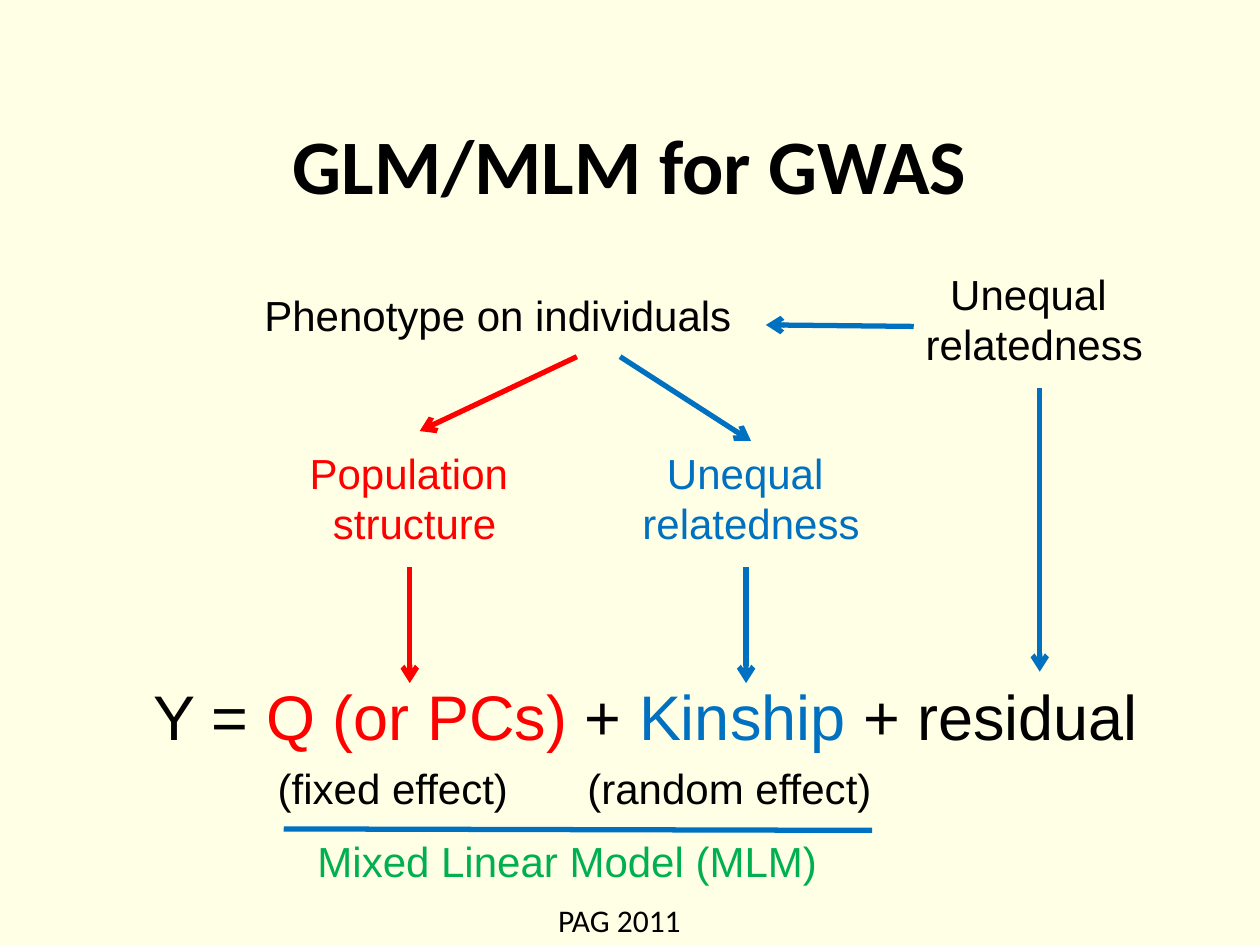
import dataclasses

import pptx
import pptx.dml.color
import pptx.enum.shapes
import pptx.enum.text
import pptx.oxml
import pptx.oxml.ns
import pptx.util

Cm = pptx.util.Cm
Pt = pptx.util.Pt
ALIGN = pptx.enum.text.PP_ALIGN


@dataclasses.dataclass(frozen=True)
class Theme:
    background: str = "FFFFE6"
    ink: str = "000000"
    structure: str = "FF0000"
    kinship: str = "0070C0"
    model: str = "00B050"
    heading_font: str = "Calibri"
    body_font: str = "Arial"
    title_size: int = 44
    equation_size: int = 36
    label_size: int = 24
    footer_size: int = 18
    line_width: int = 3


@dataclasses.dataclass(frozen=True)
class Box:
    left: float
    top: float
    width: float
    height: float

    def inner(self, left, top, width, height):
        return Box(self.left + left, self.top + top, width, height)

    def point(self, x, y):
        return Cm(self.left + x), Cm(self.top + y)

    def lengths(self):
        return [Cm(value) for value in dataclasses.astuple(self)]


THEME = Theme()


def color(value):
    return pptx.dml.color.RGBColor.from_string(value)


def add_run(paragraph, text, size, fill, font=THEME.body_font, bold=False):
    run = paragraph.add_run()
    run.text = text
    run.font.name = font
    run.font.size = Pt(size)
    run.font.bold = bold
    run.font.color.rgb = color(fill)


def add_text(slide, box, lines, size=THEME.label_size, font=THEME.body_font,
             align=ALIGN.CENTER, wrap=True):
    """Each line is a list of (text, colour) runs."""
    frame = slide.shapes.add_textbox(*box.lengths()).text_frame
    frame.word_wrap = wrap
    for index, runs in enumerate(lines):
        paragraph = frame.add_paragraph() if index else frame.paragraphs[0]
        paragraph.alignment = align
        for text, fill in runs:
            add_run(paragraph, text, size, fill, font)


def add_line(slide, start, end, fill, arrow=True):
    connector = slide.shapes.add_connector(
        pptx.enum.shapes.MSO_CONNECTOR.STRAIGHT, *start, *end)
    connector.line.color.rgb = color(fill)
    connector.line.width = Pt(THEME.line_width)
    namespace = pptx.oxml.ns.nsdecls("a")
    properties = connector._element.spPr
    if arrow:
        outline = properties.find(pptx.oxml.ns.qn("a:ln"))
        outline.append(pptx.oxml.parse_xml(
            f'<a:tailEnd {namespace} type="arrow"/>'))
    properties.append(pptx.oxml.parse_xml(f'<a:effectLst {namespace}/>'))


def fill_title(slide, box):
    title = slide.shapes.title
    title.left, title.top, title.width, title.height = box.lengths()
    title.text_frame.vertical_anchor = pptx.enum.text.MSO_ANCHOR.MIDDLE
    paragraph = title.text_frame.paragraphs[0]
    paragraph.alignment = ALIGN.CENTER
    add_run(paragraph, "GLM/MLM for GWAS", THEME.title_size, THEME.ink,
            THEME.heading_font, bold=True)


def add_causes(slide, box):
    # Phenotype and the sources of its variation
    add_text(slide, box.inner(0, 0.44, 10.16, 1.27),
             [[("Phenotype on individuals", THEME.ink)]], align=ALIGN.LEFT)
    for left, top, words, fill in (
        (0.64, 3.61, ("Population ", "structure"), THEME.structure),
        (7.42, 3.61, ("Unequal ", "relatedness"), THEME.kinship),
        (13.13, 0, ("Unequal ", "relatedness"), THEME.ink),
    ):
        add_text(slide, box.inner(left, top, 5.28, 2.31),
                 [[(word, fill)] for word in words])

    # Arrows between the causes, then down to the model terms
    for start, end, fill in (
        ((6.55, 1.91), (3.38, 3.41), THEME.structure),
        ((7.42, 1.91), (10.06, 3.61), THEME.kinship),
        ((13.34, 1.3), (10.36, 1.27), THEME.kinship),
        ((3.18, 6.15), (3.18, 8.49), THEME.structure),
        ((9.96, 6.15), (9.96, 8.49), THEME.kinship),
        ((15.88, 2.54), (15.88, 8.26), THEME.kinship),
    ):
        add_line(slide, box.point(*start), box.point(*end), fill)


def add_model(slide, box):
    # Equation
    add_text(slide, box.inner(0, 0, box.width, 1.8), [[
        ("Y = ", THEME.ink),
        ("Q (or PCs)", THEME.structure),
        (" + ", THEME.ink),
        ("Kinship", THEME.kinship),
        (" + residual", THEME.ink),
    ]], THEME.equation_size)

    # Effect types
    for left, width, text in ((2.74, 5.28, "(fixed effect)"),
                              (8.89, 6.55, "(random effect)")):
        add_text(slide, box.inner(left, 1.7, width, 1.27),
                 [[(text, THEME.ink)]])

    # Model name under its rule
    add_line(slide, box.point(15.04, 3.2), box.point(3.18, 3.17),
             THEME.kinship, arrow=False)
    add_text(slide, box.inner(3.61, 3.17, 11, 1.27),
             [[("Mixed Linear Model (MLM)", THEME.model)]], align=ALIGN.LEFT)


def add_footer(slide, box):
    add_text(slide, box, [[("PAG 2011", THEME.ink)]], THEME.footer_size,
             THEME.heading_font, ALIGN.LEFT, wrap=False)


def main():
    presentation = pptx.Presentation()
    presentation.slide_width = Cm(25.4)
    presentation.slide_height = Cm(19.05)
    slide = presentation.slides.add_slide(presentation.slide_layouts[5])
    slide.background.fill.solid()
    slide.background.fill.fore_color.rgb = color(THEME.background)

    add_footer(slide, Box(11, 18.03, 3.05, 1.02))
    fill_title(slide, Box(1.9, 1.7, 21.6, 3.18))
    add_causes(slide, Box(5.08, 5.28, 18.41, 8.49))
    add_model(slide, Box(2.54, 13.54, 20.96, 4.44))
    presentation.save("out.pptx")


if __name__ == "__main__":
    main()
